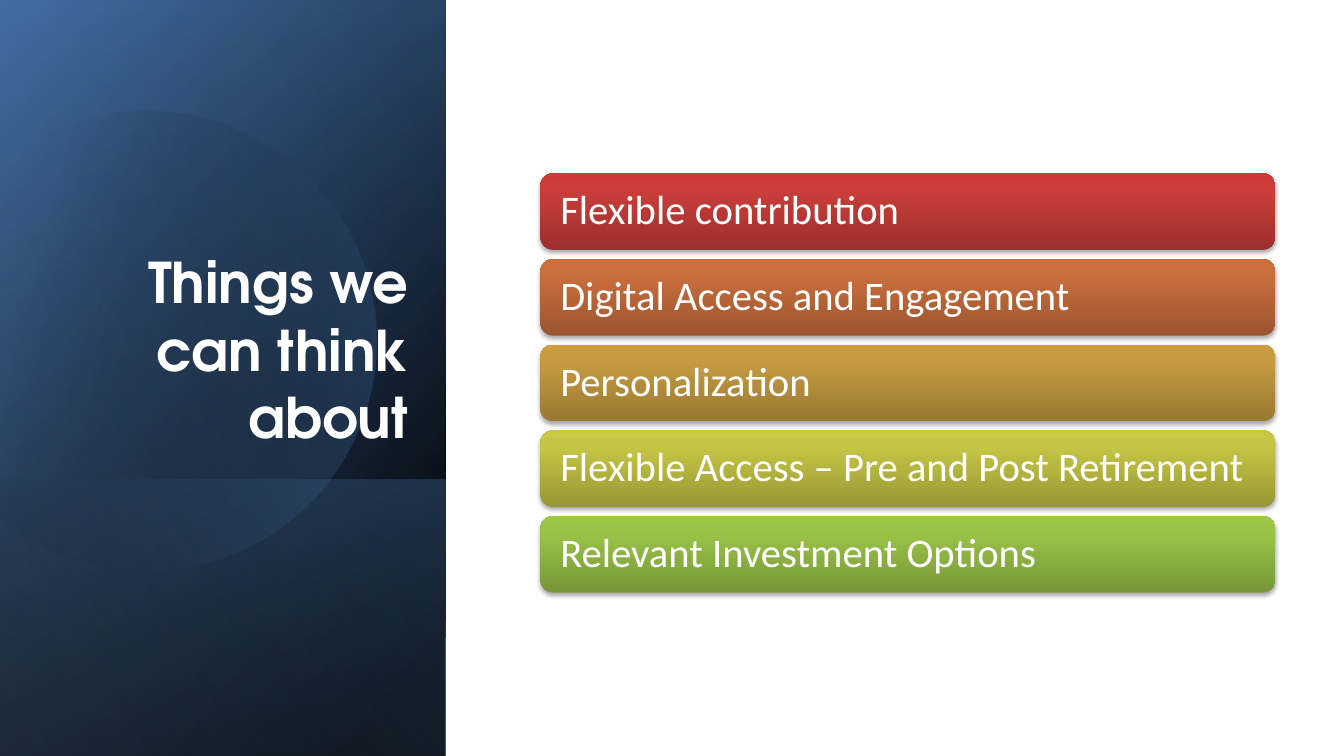
"""Build a slide with a gradient title panel and five coloured idea bars."""
import math

import pptx
import pptx.dml.color
import pptx.enum.shapes
import pptx.enum.text
import pptx.oxml
import pptx.oxml.ns
import pptx.util
from pptx.util import Inches

TITLE = "Things we can think about"
IDEAS = [
    ("Flexible contribution", ("9C2F2D", "CB3E3A", "CE3B37")),
    ("Digital Access and Engagement", ("9B552F", "C96E3D", "CD6E3B")),
    ("Personalization", ("997832", "C79C41", "CB9D3F")),
    ("Flexible Access – Pre and Post Retirement", ("989835", "C5C545", "C8C942")),
    ("Relevant Investment Options", ("779737", "9BC348", "9DC746")),
]
THEME = {
    "title": {"name": "TeX Gyre Adventor", "size": pptx.util.Pt(40), "bold": True},
    "idea": {"name": "Calibri", "size": pptx.util.Pt(29), "bold": False},
    "text_color": pptx.dml.color.RGBColor.from_string("FFFFFF"),
    "bar_stops": (0, 80, 100),
    "bar_angle": 270,
}
PANEL_BASE = [
    ((-1.54, 1.54, 7.5, 4.42), [(8, "000000", 100), (100, "376092", 100)], 50),
    ((-1.54, 1.55, 7.5, 4.42), [(0, "000000", 0), (99, "4F81BD", 46)], 30),
    ((0.84, 3.92, 2.74, 4.42), [(2, "4F81BD", 29), (100, "000000", 30)], 130),
]
PANEL_GLAZE = ((-1.54, 1.54, 7.5, 4.42), [(0, "000000", 0), (99, "95B3D7", 11)], 120)
DISC = {"center": 1.44 + 3.38j, "pivot": 1.59 + 3.38j, "radius": 2.28,
        "half_sweep": 134, "tilt": 16.1, "steps": 120}
DISC_STOPS = [(29, "000000", 0), (100, "4F81BD", 43)]
TITLE_BOX = (0.64, 1.84, 3.41, 2.62)
BAR_LEFT, BAR_TOP, BAR_WIDTH, BAR_HEIGHT, BAR_PITCH = 5.36, 1.72, 7.29, 0.76, 0.85
BAR_INSET = 0.16
NAMESPACE = pptx.oxml.ns.nsdecls("a")


def set_values(target, values):
    for name, value in values.items():
        setattr(target, name, value)


def paint_gradient(shape, stops, angle):
    shape.fill.background()
    shape.line.fill.background()
    shape.shadow.inherit = False
    stop_xml = "".join(
        f'<a:gs pos="{position * 1000}"><a:srgbClr val="{color}">'
        f'<a:alpha val="{opacity * 1000}"/></a:srgbClr></a:gs>'
        for position, color, opacity in stops)
    gradient = pptx.oxml.parse_xml(
        f'<a:gradFill {NAMESPACE} rotWithShape="1"><a:gsLst>{stop_xml}</a:gsLst>'
        f'<a:lin ang="{angle * 60000}" scaled="0"/></a:gradFill>')
    properties = shape.element.spPr
    properties.replace(properties.find(pptx.oxml.ns.qn("a:noFill")), gradient)


def add_soft_shadow(shape):
    effects = shape.element.spPr.find(pptx.oxml.ns.qn("a:effectLst"))
    effects.append(pptx.oxml.parse_xml(
        f'<a:outerShdw {NAMESPACE} blurRad="40000" dist="23000" dir="5400000" '
        'rotWithShape="0"><a:srgbClr val="000000"><a:alpha val="35000"/>'
        '</a:srgbClr></a:outerShdw>'))


def add_panel(slide, box, stops, angle):
    shape = slide.shapes.add_shape(
        pptx.enum.shapes.MSO_SHAPE.RECTANGLE, *map(Inches, box))
    shape.rotation = 90
    shape.element.spPr.xfrm.set("flipH", "1")
    paint_gradient(shape, stops, angle)


def add_disc(slide):
    tilt = math.radians(DISC["tilt"])
    turn = complex(math.cos(tilt), math.sin(tilt))
    points = []
    for step in range(DISC["steps"] + 1):
        angle = math.radians(DISC["half_sweep"] * (2 * step / DISC["steps"] - 1))
        rim = DISC["center"] + DISC["radius"] * complex(math.cos(angle), math.sin(angle))
        point = DISC["pivot"] + (rim - DISC["pivot"]) * turn
        points.append((Inches(point.real), Inches(point.imag)))
    builder = slide.shapes.build_freeform(*points[0])
    builder.add_line_segments(points[1:], close=True)
    shape = builder.convert_to_shape()
    shape.rotation = 360 - DISC["tilt"]
    paint_gradient(shape, DISC_STOPS, 30)


def write_text(shape, text, style, frame_values, paragraph_values):
    frame = shape.text_frame
    set_values(frame, {"word_wrap": True,
                       "auto_size": pptx.enum.text.MSO_AUTO_SIZE.NONE, **frame_values})
    paragraph = frame.paragraphs[0]
    set_values(paragraph, paragraph_values)
    run = paragraph.add_run()
    run.text = text
    set_values(run.font, THEME[style])
    run.font.color.rgb = THEME["text_color"]


def add_title(slide):
    title = slide.shapes.title
    title.element.getparent().append(title.element)
    set_values(title, dict(zip(("left", "top", "width", "height"),
                               map(Inches, TITLE_BOX))))
    margins = dict.fromkeys(
        ("margin_left", "margin_right", "margin_top", "margin_bottom"), 0)
    write_text(title, TITLE, "title",
               {"vertical_anchor": pptx.enum.text.MSO_ANCHOR.BOTTOM, **margins},
               {"alignment": pptx.enum.text.PP_ALIGN.RIGHT})


def add_bar(slide, index, text, colors):
    top = BAR_TOP + index * BAR_PITCH
    bar = slide.shapes.add_shape(
        pptx.enum.shapes.MSO_SHAPE.ROUNDED_RECTANGLE,
        *map(Inches, (BAR_LEFT, top, BAR_WIDTH, BAR_HEIGHT)))
    stops = [(position, color, 100)
             for position, color in zip(THEME["bar_stops"], colors)]
    paint_gradient(bar, stops, THEME["bar_angle"])
    add_soft_shadow(bar)
    margins = dict.fromkeys(
        ("margin_left", "margin_right", "margin_top", "margin_bottom"),
        Inches(BAR_INSET))
    write_text(bar, text, "idea",
               {"vertical_anchor": pptx.enum.text.MSO_ANCHOR.MIDDLE, **margins},
               {"alignment": pptx.enum.text.PP_ALIGN.LEFT, "line_spacing": 0.9})


def main():
    presentation = pptx.Presentation()
    presentation.slide_width = Inches(13.33)
    presentation.slide_height = Inches(7.5)
    slide = presentation.slides.add_slide(presentation.slide_layouts[5])
    for panel in PANEL_BASE:
        add_panel(slide, *panel)
    add_disc(slide)
    add_panel(slide, *PANEL_GLAZE)
    add_title(slide)
    for index, (text, colors) in enumerate(IDEAS):
        add_bar(slide, index, text, colors)
    presentation.save("out.pptx")


if __name__ == "__main__":
    main()
